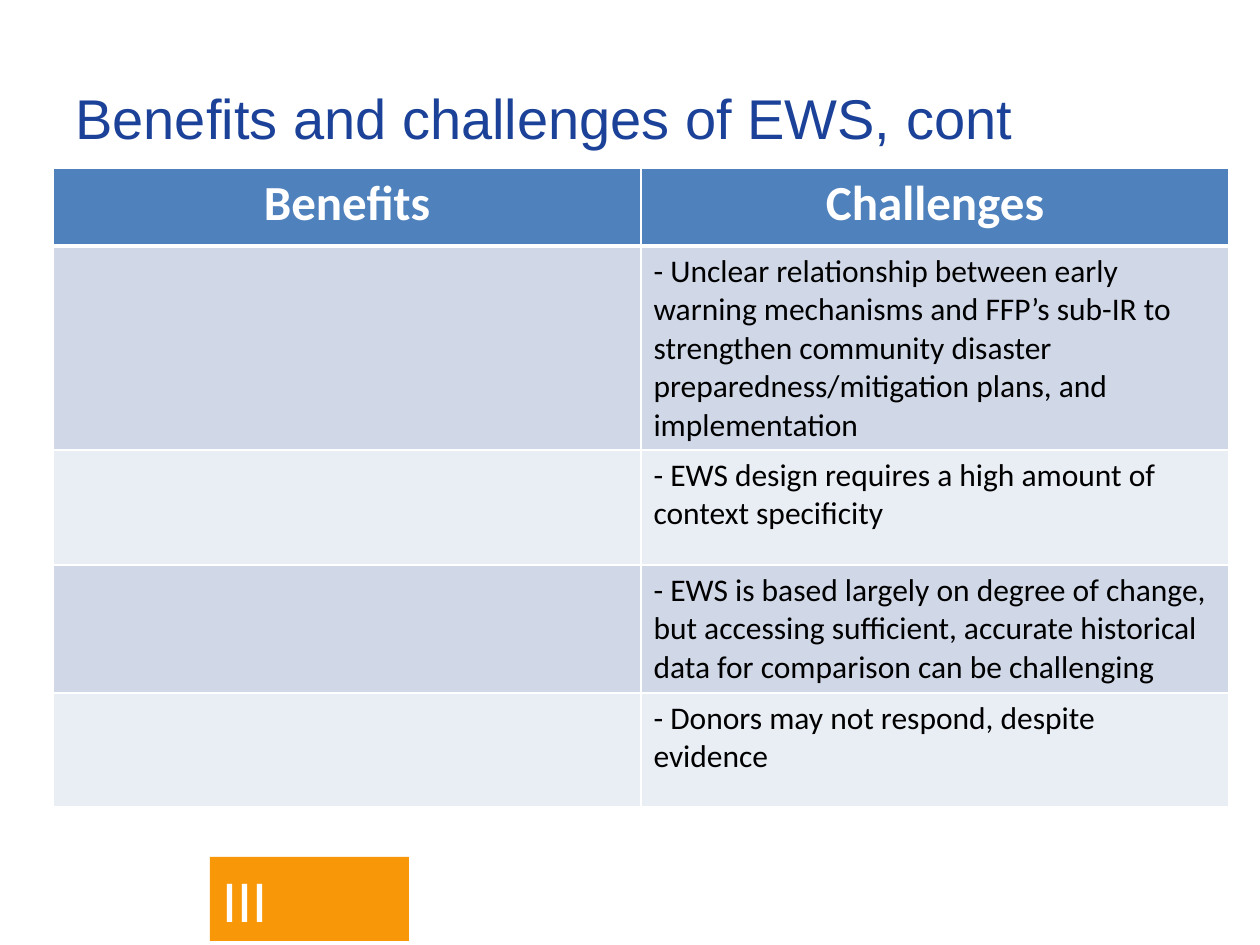
from lxml.etree import SubElement
from pptx import Presentation
from pptx.dml.color import RGBColor
from pptx.enum.shapes import MSO_SHAPE
from pptx.enum.text import MSO_ANCHOR, PP_ALIGN
from pptx.oxml.ns import qn
from pptx.util import Pt

PX = 914400 // 126
COLORS = {
    "title": "1B4298", "badge": "F89708", "header": "4F81BD",
    "odd": "D0D8E8", "even": "E9EDF4", "white": "FFFFFF", "black": "000000",
}
FORMATS = {
    "title": {"name": "Arial", "size": Pt(32), "bold": False},
    "badge": {"name": "Calibri", "size": Pt(34), "bold": False},
    "header": {"name": "Calibri", "size": Pt(28), "bold": True},
    "body": {"name": "Calibri", "size": Pt(18), "bold": False},
}
HEADINGS = ("Benefits", "Challenges")
CHALLENGES = (
    "- Unclear relationship between early warning mechanisms and FFP’s sub-IR "
    "to strengthen community disaster preparedness/mitigation plans, and implementation",
    "- EWS design requires a high amount of context specificity",
    "- EWS is based largely on degree of change, but accessing sufficient, "
    "accurate historical data for comparison can be challenging",
    "- Donors may not respond, despite evidence",
)
ROW_HEIGHTS = (78, 204, 115, 128, 114)


def color(key):
    return RGBColor.from_string(COLORS[key])


def emu(box):
    return [length * PX for length in box]


def write(frame, text, style, ink, align=PP_ALIGN.LEFT):
    paragraph = frame.paragraphs[0]
    paragraph.alignment = align
    run = paragraph.add_run()
    run.text = text
    for attribute, value in FORMATS[style].items():
        setattr(run.font, attribute, value)
    run.font.color.rgb = color(ink)


def add_title(slide, box):
    frame = slide.shapes.add_textbox(*emu(box)).text_frame
    frame.word_wrap = True
    frame.vertical_anchor = MSO_ANCHOR.MIDDLE
    write(frame, "Benefits and challenges of EWS, cont", "title", "title")


def add_badge(slide, box):
    badge = slide.shapes.add_shape(MSO_SHAPE.RECTANGLE, *emu(box))
    badge.shadow.inherit = False
    badge.fill.solid()
    badge.fill.fore_color.rgb = color("badge")
    badge.line.fill.background()
    badge.text_frame.vertical_anchor = MSO_ANCHOR.TOP
    write(badge.text_frame, "III", "badge", "white")


def style_cell(cell, fill, bottom=1):
    """Give a cell white borders and a solid fill; borders must precede the fill."""
    properties = cell._tc.get_or_add_tcPr()
    for side, width in {"L": 1, "R": 1, "T": 1, "B": bottom}.items():
        border = SubElement(properties, qn(f"a:ln{side}"), w=str(Pt(width)))
        SubElement(SubElement(border, qn("a:solidFill")), qn("a:srgbClr"), val=COLORS["white"])
    cell.fill.solid()
    cell.fill.fore_color.rgb = color(fill)


def add_comparison(slide, box):
    table = slide.shapes.add_table(len(ROW_HEIGHTS), len(HEADINGS), *emu(box)).table
    for row, height in zip(table.rows, ROW_HEIGHTS):
        row.height = height * PX
    for column, heading in enumerate(HEADINGS):
        cell = table.cell(0, column)
        style_cell(cell, "header", bottom=3)
        write(cell.text_frame, heading, "header", "white", PP_ALIGN.CENTER)
    for row, challenge in enumerate(CHALLENGES, start=1):
        for column in range(len(HEADINGS)):
            style_cell(table.cell(row, column), "odd" if row % 2 else "even")
        write(table.cell(row, 1).text_frame, challenge, "body", "black")


def main():
    deck = Presentation()
    deck.slide_width, deck.slide_height = emu((1260, 945))
    slide = deck.slides.add_slide(deck.slide_layouts[6])
    add_badge(slide, (210, 857, 199, 84))
    add_title(slide, (63, 38, 1134, 158))
    add_comparison(slide, (53, 168, 1176, sum(ROW_HEIGHTS)))
    deck.save("out.pptx")


if __name__ == "__main__":
    main()
